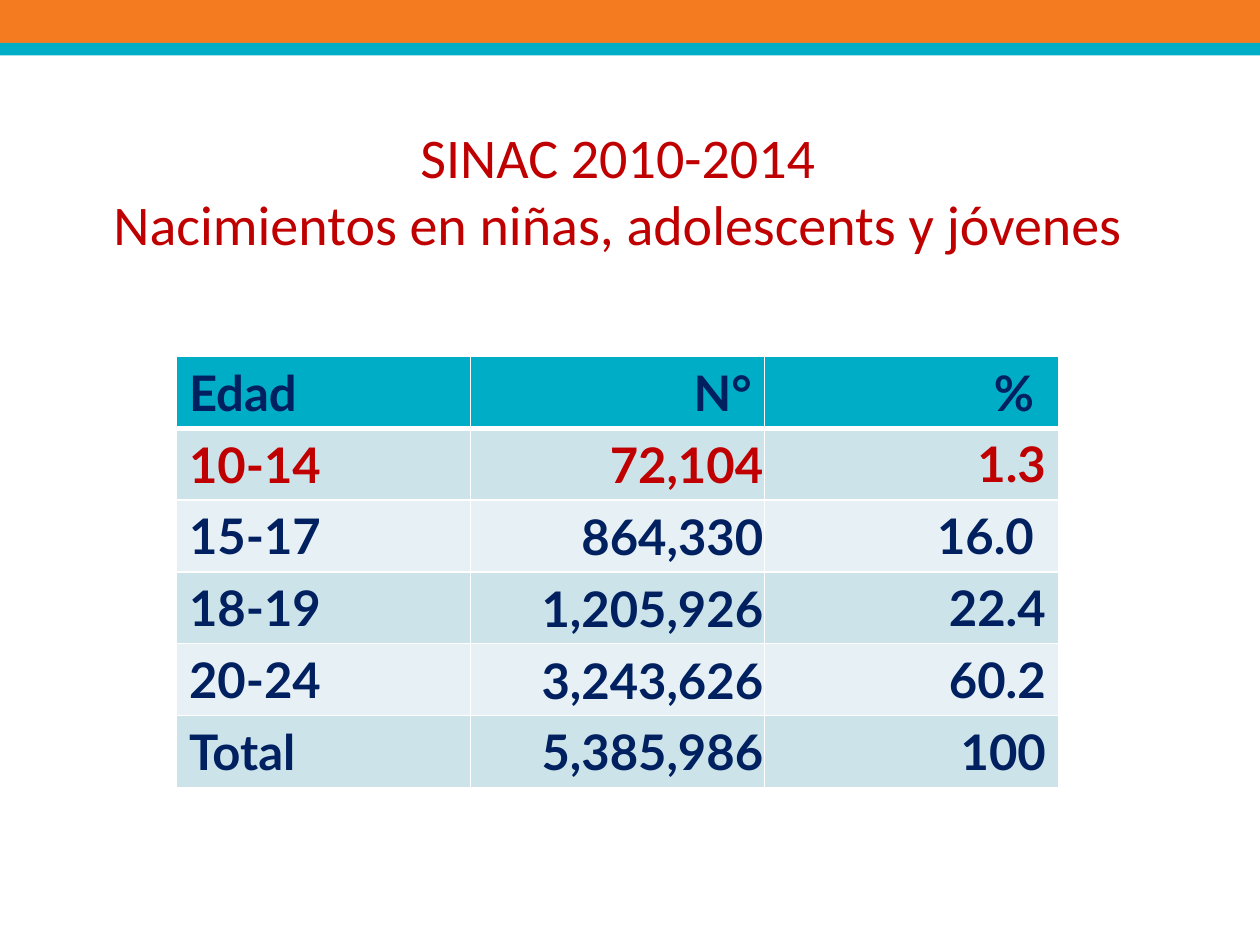
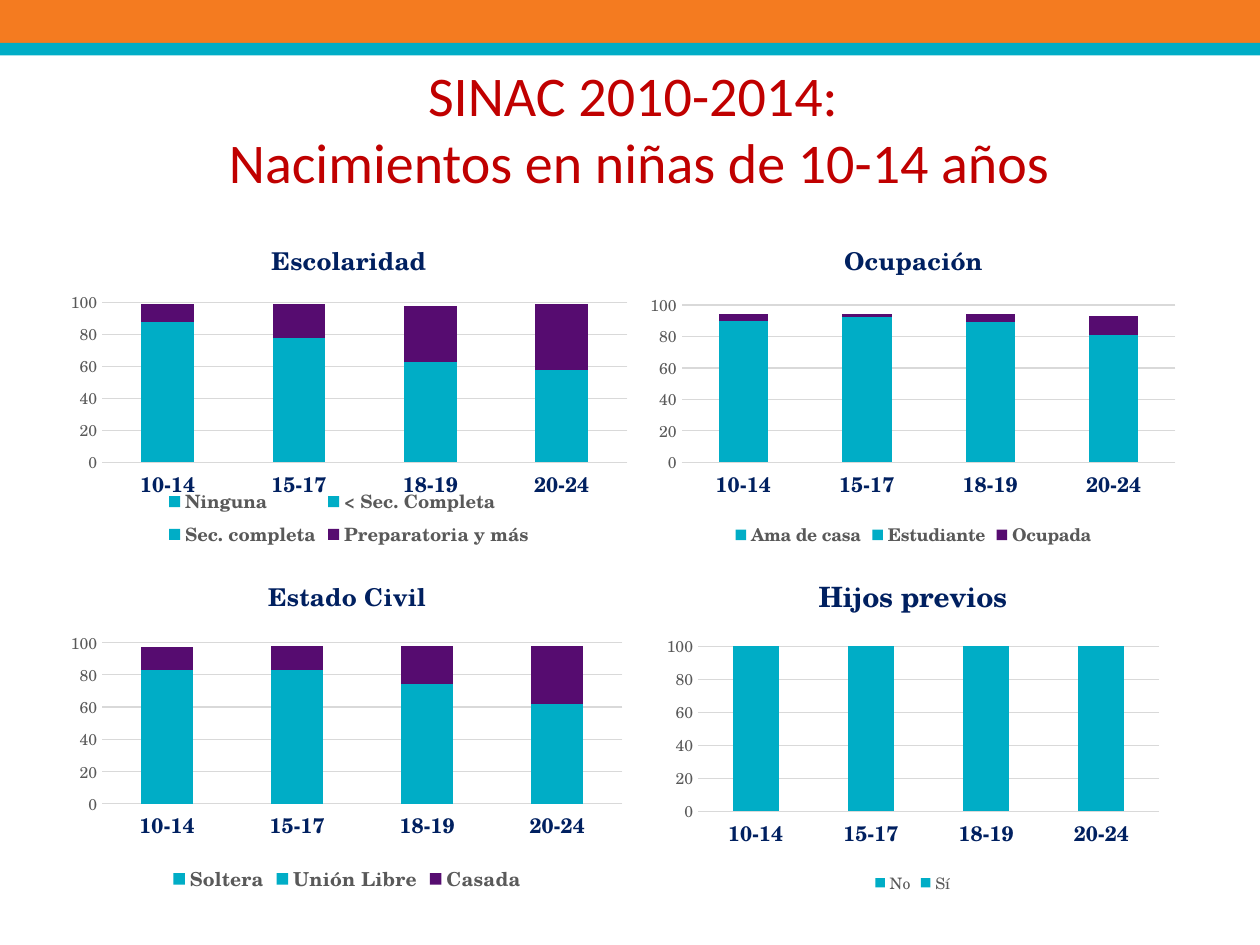
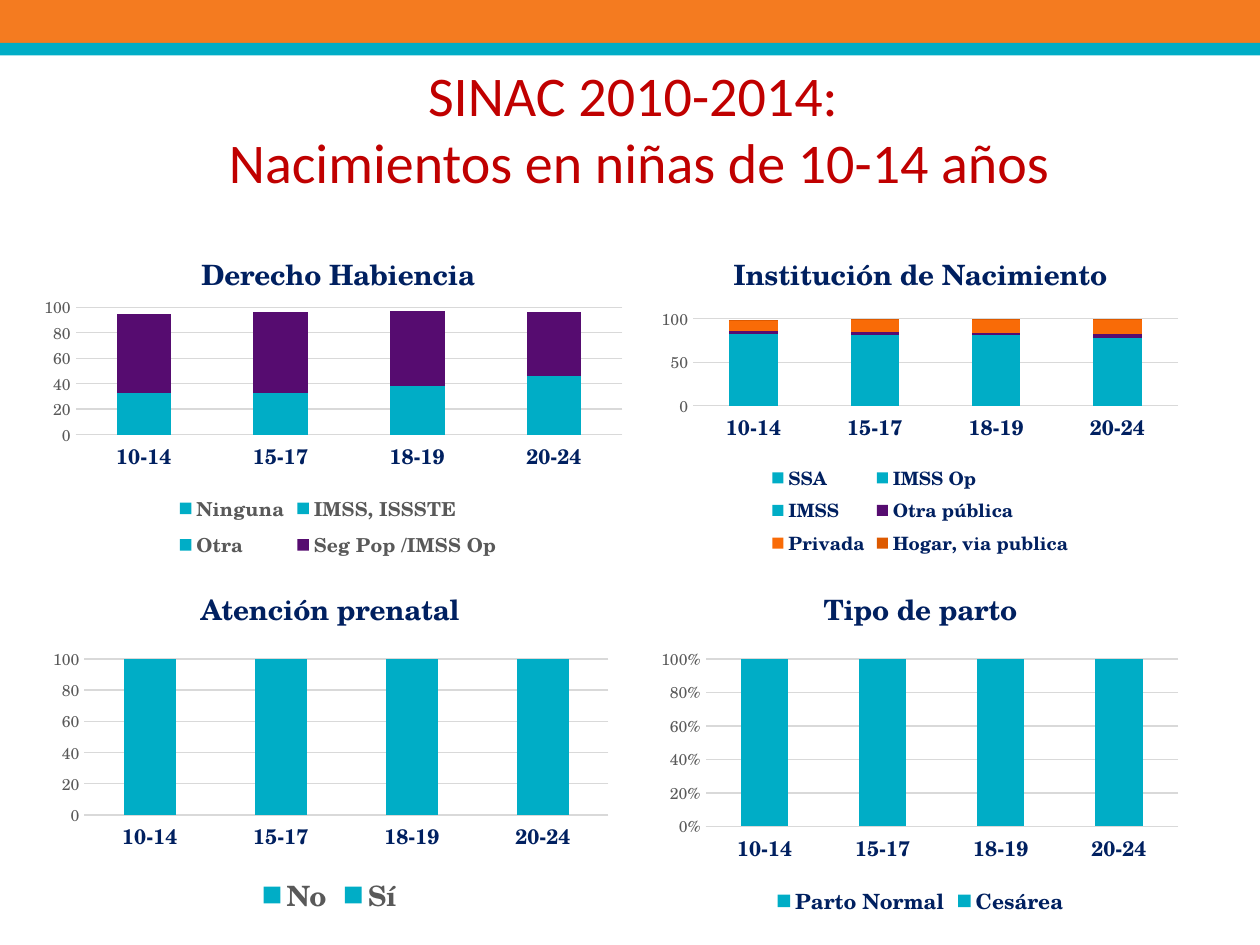
from dataclasses import dataclass

from pptx import Presentation
from pptx.chart.data import CategoryChartData
from pptx.dml.color import RGBColor
from pptx.enum.chart import XL_CHART_TYPE as ChartType
from pptx.enum.chart import XL_LEGEND_POSITION as LegendPosition
from pptx.enum.chart import XL_TICK_MARK as TickMark
from pptx.enum.shapes import MSO_SHAPE as ShapeKind
from pptx.enum.text import MSO_ANCHOR as Anchor
from pptx.enum.text import MSO_AUTO_SIZE as AutoSize
from pptx.enum.text import PP_ALIGN as Align
from pptx.oxml import parse_xml
from pptx.oxml.ns import nsdecls
from pptx.util import Inches, Pt


@dataclass(frozen=True)
class Theme:
    orange: str = "F47B20"
    teal: str = "00ADC6"
    purple: str = "560C70"
    bright_orange: str = "F96B07"
    dark_orange: str = "DD5900"
    red: str = "C00000"
    navy: str = "002060"
    gray: str = "595959"
    grid: str = "D9D9D9"
    black: str = "000000"
    white: str = "FFFFFF"
    row_dark: str = "CCE3EA"
    row_light: str = "E7F1F5"
    title_font: str = "Calibri"
    table_font: str = "Lato"
    chart_font: str = "TeX Gyre Schola"
    title_size: float = 32
    table_size: float = 28
    chart_title_size: float = 16
    small_chart_title_size: float = 14
    category_size: float = 12
    chart_size: float = 10
    value_size: float = 9


THEME = Theme()
AGES = ["10-14", "15-17", "18-19", "20-24"]


def style_font(font, size, color, name, bold=False):
    font.size, font.name, font.bold = Pt(size), name, bold
    font.color.rgb = RGBColor.from_string(color)


def write_text(frame, text, align=Align.LEFT, **font_format):
    """Fill a text frame, one paragraph per line of text."""
    for index, line in enumerate(text.split("\n")):
        paragraph = frame.add_paragraph() if index else frame.paragraphs[0]
        paragraph.alignment = align
        run = paragraph.add_run()
        run.text = line
        style_font(run.font, **font_format)


def set_borders(cell, color, **widths):
    properties = cell._tc.get_or_add_tcPr()
    for side in "LRTB":
        width = Pt(widths.get(side, 1))
        properties.append(parse_xml(
            f'<a:ln{side} {nsdecls("a")} w="{width}"><a:solidFill>'
            f'<a:srgbClr val="{color}"/></a:solidFill></a:ln{side}>'))


def set_plot_area(chart, box, plot):
    """Place the inner plot area; plot holds slide edges in inches."""
    left, top, width, height = box
    plot_left, plot_top, plot_right, plot_bottom = plot
    fractions = {
        "x": (plot_left - left) / width,
        "y": (plot_top - top) / height,
        "w": (plot_right - plot_left) / width,
        "h": (plot_bottom - plot_top) / height,
    }
    modes = "".join(f'<c:{axis}Mode val="edge"/>' for axis in "xy")
    values = "".join(f'<c:{key} val="{value:.4f}"/>' for key, value in fractions.items())
    plot_area = chart.element.xpath("c:chart/c:plotArea")[0]
    for layout in plot_area.xpath("c:layout"):
        plot_area.remove(layout)
    plot_area.insert(0, parse_xml(
        f'<c:layout {nsdecls("c")}><c:manualLayout><c:layoutTarget val="inner"/>'
        f'{modes}{values}</c:manualLayout></c:layout>'))


class Deck:
    def __init__(self, theme):
        self.theme = theme
        self.presentation = Presentation()
        self.presentation.slide_width = Inches(10)
        self.presentation.slide_height = Inches(7.5)
        self.slide = None

    def add_slide(self, title, left, top):
        self.slide = self.presentation.slides.add_slide(self.presentation.slide_layouts[6])
        self.add_band(0, 0.34, self.theme.orange)
        self.add_band(0.34, 0.1, self.theme.teal)
        self.add_title(title, left, top)

    def add_band(self, top, height, color):
        band = self.slide.shapes.add_shape(
            ShapeKind.RECTANGLE, 0, Inches(top), Inches(10), Inches(height))
        band.shadow.inherit = False
        band.fill.solid()
        band.fill.fore_color.rgb = RGBColor.from_string(color)
        band.line.fill.background()

    def add_title(self, text, left, top):
        frame = self.slide.shapes.add_textbox(
            Inches(left), Inches(top), Inches(9.81), Inches(1.18)).text_frame
        frame.word_wrap = True
        frame.auto_size = AutoSize.SHAPE_TO_FIT_TEXT
        write_text(frame, text, Align.CENTER, size=self.theme.title_size,
                   color=self.theme.red, name=self.theme.title_font)

    def add_table(self, rows, box, highlighted_row):
        table = self.slide.shapes.add_table(
            len(rows), len(rows[0]), *map(Inches, box)).table
        for row_index, row in enumerate(rows):
            for column_index, text in enumerate(row):
                self.fill_cell(table.cell(row_index, column_index), text, row_index,
                               column_index, row_index == highlighted_row)

    def fill_cell(self, cell, text, row, column, highlighted):
        theme = self.theme
        # The header is closed by a thick line, shared with the row below
        set_borders(cell, theme.white, B=3 if row == 0 else 1, T=3 if row == 1 else 1)
        fill = theme.row_dark if row % 2 else theme.row_light
        cell.fill.solid()
        cell.fill.fore_color.rgb = RGBColor.from_string(fill if row else theme.teal)
        if row and column < 2:
            cell.vertical_anchor = Anchor.MIDDLE
        if row and column == 1:
            cell.margin_left = cell.margin_right = cell.margin_top = Inches(0.01)
            cell.margin_bottom = 0
        write_text(cell.text_frame, text, Align.RIGHT if column else Align.LEFT,
                   size=theme.table_size, color=theme.red if highlighted else theme.navy,
                   name=theme.table_font, bold=True)

    def add_chart(self, title, box, plot, series, legend_size, title_size=None,
                  legend_color=None, legend_bold=True, colors=None, percent=False):
        theme = self.theme
        data = CategoryChartData()
        data.categories = AGES
        for name, values in series.items():
            data.add_series(name, values)
        kind = ChartType.COLUMN_STACKED_100 if percent else ChartType.COLUMN_STACKED
        chart = self.slide.shapes.add_chart(kind, *map(Inches, box), data).chart
        style_font(chart.font, theme.chart_size, theme.black, theme.chart_font)
        set_plot_area(chart, box, plot)

        # Title and legend
        chart.has_title = True
        write_text(chart.chart_title.text_frame, title, Align.CENTER,
                   size=title_size or theme.chart_title_size,
                   color=theme.navy, name=theme.chart_font, bold=True)
        chart.chart_title.include_in_layout = False
        chart.has_legend = True
        chart.legend.position = LegendPosition.BOTTOM
        chart.legend.include_in_layout = False
        style_font(chart.legend.font, legend_size, legend_color or theme.gray,
                   theme.chart_font, legend_bold)

        # Columns
        columns = chart.plots[0]
        columns.gap_width, columns.overlap = 150, 100
        columns.vary_by_categories = False
        colors = colors or [theme.teal] * len(series)
        for column, color in zip(columns.series, colors):
            column.format.fill.solid()
            column.format.fill.fore_color.rgb = RGBColor.from_string(color)

        # Axes
        ages, values = chart.category_axis, chart.value_axis
        for axis in (ages, values):
            axis.major_tick_mark = axis.minor_tick_mark = TickMark.NONE
        style_font(ages.tick_labels.font, theme.category_size, theme.navy,
                   theme.chart_font, True)
        style_font(values.tick_labels.font, theme.value_size, theme.gray, theme.chart_font)
        values.has_major_gridlines = True
        for line in (ages.format.line, values.major_gridlines.format.line):
            line.width = Pt(0.75)
            line.color.rgb = RGBColor.from_string(theme.grid)
        values.format.line.fill.background()
        if percent:
            values.tick_labels.number_format = "0%"
            values.tick_labels.number_format_is_linked = False
        else:
            values.minimum_scale, values.maximum_scale = 0, 100


def main():
    deck = Deck(THEME)
    teal, purple = THEME.teal, THEME.purple
    small_title = THEME.small_chart_title_size
    girls_title = "SINAC 2010-2014: \nNacimientos en niñas de 10-14 años"

    # Slide 1: births by age
    deck.add_slide("SINAC 2010-2014\nNacimientos en niñas, adolescents y jóvenes", 0, 0.92)
    deck.add_table([
        ("Edad", "N°", "% "),
        ("10-14", "72,104", "1.3"),
        ("15-17", "864,330", "16.0 "),
        ("18-19", "1,205,926", "22.4"),
        ("20-24", "3,243,626", "60.2"),
        ("Total", "5,385,986", "100"),
    ], (1.4, 2.83, 7, 3.42), highlighted_row=1)

    # Slide 2: social profile
    deck.add_slide(girls_title, 0.17, 0.43)
    deck.add_chart(
        "Escolaridad", (0.47, 1.75, 4.6, 2.64), (0.81, 2.4, 4.98, 3.67),
        {"Ninguna": (4, 2, 2, 2),
         "< Sec. Completa": (70, 40, 25, 22),
         "Sec. completa": (14, 36, 36, 34),
         "Preparatoria y más": (11, 21, 35, 41)},
        legend_size=10.5, title_size=small_title, colors=[teal, teal, teal, purple])
    deck.add_chart(
        "Estado Civil", (0.47, 4.42, 4.57, 2.72), (0.81, 5.1, 4.94, 6.38),
        {"Soltera": (24, 20, 15, 11),
         "Unión Libre": (59, 63, 59, 51),
         "Casada": (14, 15, 24, 36)},
        legend_size=11, title_size=small_title, colors=[teal, teal, purple])
    deck.add_chart(
        "Ocupación", (5.08, 1.75, 4.34, 2.64), (5.41, 2.42, 9.33, 3.67),
        {"Ama de casa": (83, 84, 83, 77),
         "Estudiante": (7, 8, 6, 4),
         "Ocupada": (4, 2, 5, 12)},
        legend_size=10, title_size=small_title, colors=[teal, teal, purple])
    deck.add_chart(
        "Hijos previos", (5.21, 4.39, 4.07, 2.75), (5.54, 5.13, 9.2, 6.44),
        {"No": (86, 88, 72, 46), "Sí": (14, 12, 28, 54)},
        legend_size=9, legend_bold=False)

    # Slide 3: health care
    deck.add_slide(girls_title, 0.17, 0.43)
    deck.add_chart(
        "Derecho Habiencia", (0.33, 1.83, 4.71, 2.66), (0.6, 2.44, 4.94, 3.45),
        {"Ninguna": (22, 22, 22, 20),
         "IMSS, ISSSTE": (10, 10, 15, 24),
         "Otra": (1, 1, 1, 2),
         "Seg Pop /IMSS Op": (62, 63, 59, 50)},
        legend_size=11, colors=[teal, teal, teal, purple])
    deck.add_chart(
        "Institución de Nacimiento", (5.17, 1.83, 4.27, 2.63), (5.5, 2.53, 9.35, 3.22),
        {"SSA": (68, 67, 62, 52),
         "IMSS Op": (6, 5, 5, 4),
         "IMSS": (9, 9, 14, 22),
         "Otra pública": (3, 4, 3, 4),
         "Privada": (11, 13, 14, 16),
         "Hogar, via publica": (2, 2, 2, 2)},
        legend_size=10.5, legend_color=THEME.navy,
        colors=[teal, teal, teal, purple, THEME.bright_orange, THEME.dark_orange])
    deck.add_chart(
        "Atención prenatal", (0.33, 4.49, 4.58, 2.83), (0.67, 5.23, 4.83, 6.47),
        {"No": (39, 36, 33, 29), "Sí": (61, 64, 67, 71)}, legend_size=16)
    deck.add_chart(
        "Tipo de parto", (5.17, 4.49, 4.27, 2.83), (5.6, 5.23, 9.35, 6.56),
        {"Parto Normal": (59, 63, 62, 58), "Cesárea": (41, 37, 38, 42)},
        legend_size=12, legend_color=THEME.navy, percent=True)

    deck.presentation.save("out.pptx")


if __name__ == "__main__":
    main()
